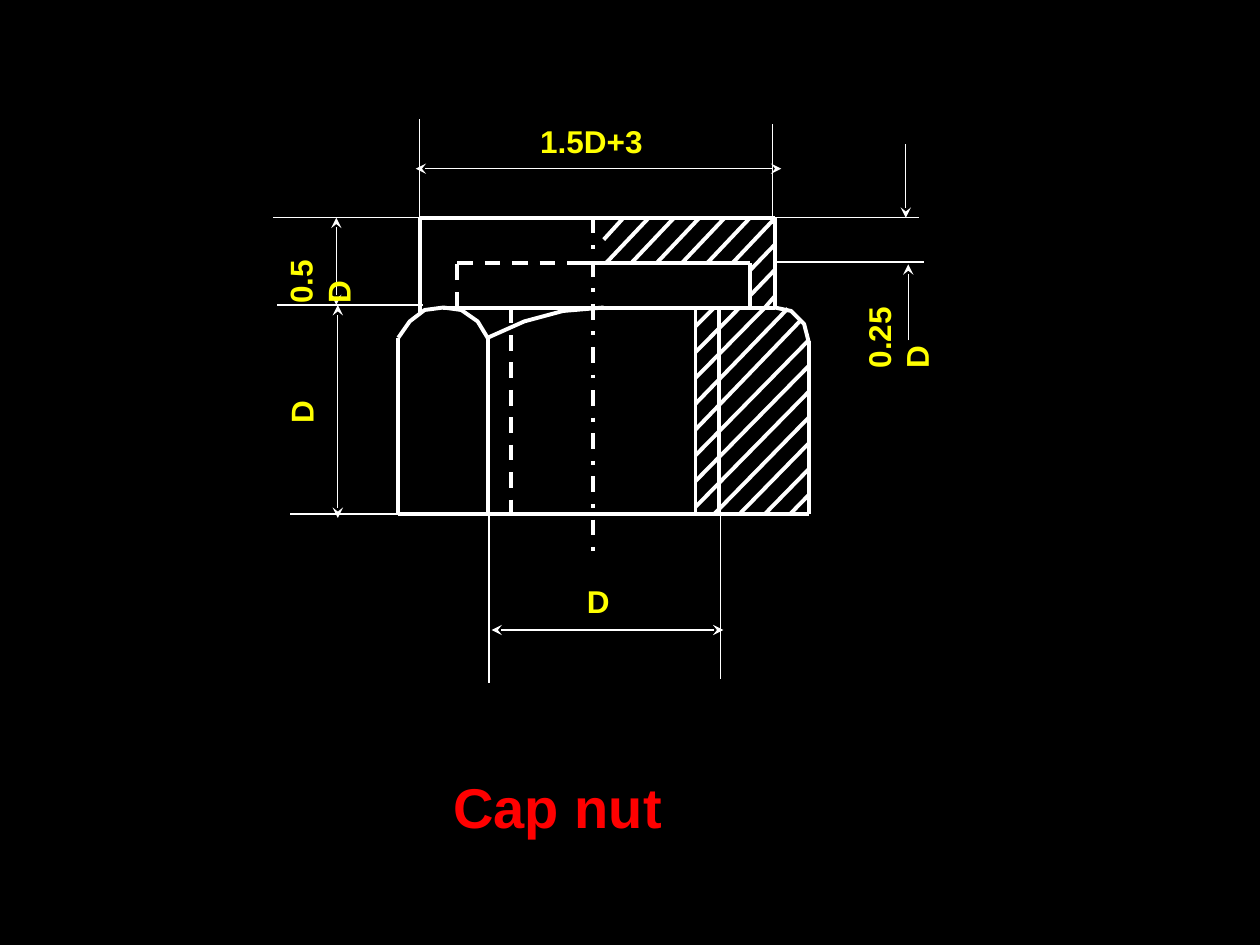
from dataclasses import dataclass

from lxml.etree import SubElement
from pptx import Presentation
from pptx.dml.color import RGBColor as RGB
from pptx.enum.dml import MSO_LINE as DASH
from pptx.enum.shapes import MSO_CONNECTOR as CONN
from pptx.enum.text import MSO_AUTO_SIZE as FIT
from pptx.oxml.ns import qn
from pptx.util import Cm, Pt


@dataclass(frozen=True)
class Theme:
    back: RGB = RGB(0, 0, 0)
    ink: RGB = RGB(255, 255, 255)
    label: RGB = RGB(255, 255, 0)
    title: RGB = RGB(255, 0, 0)
    font: str = "Arial"
    label_pt: int = 18
    title_pt: int = 32
    thick: float = 2.25
    thin: float = 0.75


class Drawing:
    """Draws lines, curves and labels on one slide, with lengths in centimetres."""

    def __init__(self, slide, theme):
        self.s, self.t = slide, theme
        fill = slide.background.fill
        fill.solid()
        fill.fore_color.rgb = theme.back

    def stroke(self, line, weight, dash=None):
        line.color.rgb = self.t.ink
        line.width = Pt(weight)
        if dash:
            line.dash_style = dash

    def line(self, start, end, weight=None, dash=None, ends=()):
        c = self.s.shapes.add_connector(CONN.STRAIGHT, *map(Cm, start + end))
        self.stroke(c.line, weight or self.t.thick, dash)
        for name in ends:
            SubElement(c.line._get_or_add_ln(), qn(f"a:{name}"), type="stealth")
        SubElement(c._element.spPr, qn("a:effectLst"))

    def extension(self, start, end):
        self.line(start, end, self.t.thin)

    def dimension(self, start, end, ends=("headEnd", "tailEnd")):
        self.line(start, end, self.t.thin, ends=ends)

    def curve(self, *points):
        pts = [tuple(map(Cm, p)) for p in points]
        builder = self.s.shapes.build_freeform(*pts[0], scale=1.0)
        builder.add_line_segments(pts[1:], close=False)
        sp = builder.convert_to_shape()
        sp.shadow.inherit = False
        sp.fill.background()
        self.stroke(sp.line, self.t.thick)

    def text(self, words, box, size, color, wrap=False, turn=0):
        sp = self.s.shapes.add_textbox(*map(Cm, box))
        sp.rotation = turn
        tf = sp.text_frame
        tf.word_wrap = wrap
        tf.auto_size = FIT.NONE
        r = tf.paragraphs[0].add_run()
        r.text = words
        r.font.name, r.font.size, r.font.bold = self.t.font, Pt(size), True
        r.font.color.rgb = color

    def label(self, words, left, top, width, wrap=False, turn=0):
        self.text(words, (left, top, width, 1.02), self.t.label_pt, self.t.label, wrap, turn)

    def title(self, words, box):
        self.text(words, box, self.t.title_pt, self.t.title, wrap=True)


NUT_L, NUT_R, EDGE = 8.03, 16.3, 9.83
CAP_L, CAP_R = 8.46, 15.62
BORE, THREAD = 14.02, 14.5
RECESS_L, RECESS_R = 9.22, 15.11
CAP_TOP, RECESS_TOP, NUT_TOP, SHOULDER, BASE = 4.39, 5.31, 6.2, 6.81, 10.36
STEP_X, STEP_Y = 0.51, 0.52


def draw_nut(d):
    d.curve((12.17, NUT_TOP), (11.35, 6.27), (10.57, 6.48), (EDGE, SHOULDER))
    d.curve((EDGE, SHOULDER), (9.63, 6.48), (9.3, 6.25), (8.94, NUT_TOP),
            (8.56, 6.25), (8.26, 6.48), (NUT_L, SHOULDER))
    d.curve((NUT_R, 6.88), (16.21, 6.53), (15.95, 6.27), (CAP_R, NUT_TOP))
    for x, top in ((NUT_L, SHOULDER), (EDGE, SHOULDER), (BORE, NUT_TOP),
                   (THREAD, NUT_TOP), (NUT_R, 6.88)):
        d.line((x, top), (x, BASE))
    d.line((8.94, NUT_TOP), (CAP_R, NUT_TOP))
    d.line((NUT_L, BASE), (NUT_R, BASE))
    d.line((10.31, NUT_TOP), (10.31, BASE), dash=DASH.DASH)


def draw_cap(d):
    d.line((CAP_L, 6.3), (CAP_L, CAP_TOP))
    d.line((CAP_L, CAP_TOP), (CAP_R, CAP_TOP))
    d.line((CAP_R, CAP_TOP), (CAP_R, NUT_TOP))
    d.line((RECESS_L, NUT_TOP), (RECESS_L, RECESS_TOP), dash=DASH.DASH)
    d.line((RECESS_L, RECESS_TOP), (12.88, RECESS_TOP), dash=DASH.DASH)
    d.line((11.46, RECESS_TOP), (RECESS_R, RECESS_TOP))
    d.line((RECESS_R, RECESS_TOP), (RECESS_R, NUT_TOP))


def draw_hatching(d):
    starts = [(BORE, 6.58 + STEP_Y * i) for i in range(8)]
    starts += [(14.4 + STEP_X * i, BASE) for i in range(4)]
    ends = [(14.4 + STEP_X * i, NUT_TOP) for i in range(3)]
    ends += [(15.88, 6.22), (16.15, 6.45)]
    ends += [(NUT_R, 6.86 + STEP_Y * i) for i in range(7)]
    for start, end in zip(starts, ends):
        d.line(start, end)
    for i in range(6):
        d.line((12.21 + STEP_X * i, RECESS_TOP), (13.08 + STEP_X * i, CAP_TOP))
    d.line((12.17, 4.83), (12.57, CAP_TOP))
    for i in range(2):
        d.line((RECESS_R, 5.46 + STEP_X * i), (CAP_R, 4.93 + STEP_X * i))
    d.line((15.42, NUT_TOP), (CAP_R, 5.97))


def draw_dimensions(d):
    d.line((11.96, CAP_TOP), (11.96, 11.18), dash=DASH.DASH_DOT)
    for y, start, end in ((6.15, 8.53, 5.59), (BASE, 8.76, 5.84), (CAP_TOP, CAP_L, 5.51),
                          (CAP_TOP, 18.52, 15.57), (5.28, 18.62, 15.67)):
        d.extension((start, y), (end, y))
    for x, start, end in ((CAP_L, CAP_TOP, 2.39), (15.57, 4.52, 2.51),
                          (9.86, 10.24, 13.77), (14.53, 10.19, 13.69)):
        d.extension((x, start), (x, end))
    d.dimension((6.81, 6.15), (6.81, 10.44))
    d.dimension((6.78, CAP_TOP), (6.78, 6.15))
    d.dimension((8.38, 3.4), (15.75, 3.4))
    d.dimension((9.91, 12.7), (14.58, 12.7))
    d.dimension((18.26, CAP_TOP), (18.26, 2.9), ends=("headEnd",))
    d.dimension((18.31, 6.86), (18.31, 5.33), ends=("tailEnd",))
    d.label("D", 5.59, 7.8, 0.97, turn=270)
    d.label("0.5D", 5.17, 4.98, 1.77, wrap=True, turn=270)
    d.label("0.25D", 16.65, 6.1, 2.13, wrap=True, turn=270)
    d.label("1.5D+3", 10.64, 2.34, 2.57)
    d.label("D", 11.58, 11.61, 0.97)


def main():
    prs = Presentation()
    prs.slide_width, prs.slide_height = Cm(25.4), Cm(19.05)
    d = Drawing(prs.slides.add_slide(prs.slide_layouts[6]), Theme())
    d.title("Cap nut", (8.89, 15.44, 5.72, 1.6))
    draw_nut(d)
    draw_cap(d)
    draw_hatching(d)
    draw_dimensions(d)
    prs.save("out.pptx")


if __name__ == "__main__":
    main()
